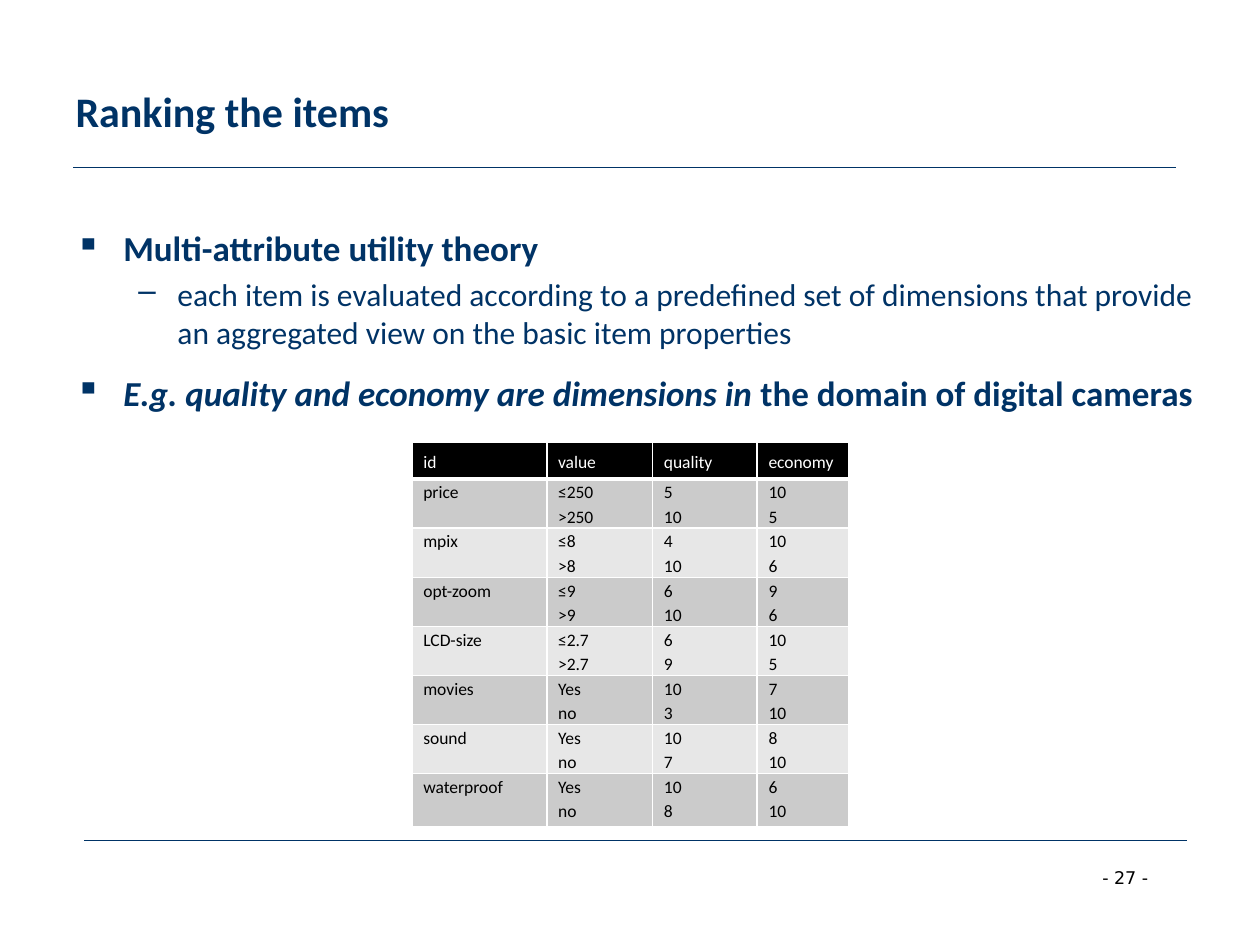
import lxml.etree
import pptx
import pptx.dml.color
import pptx.enum.shapes
import pptx.enum.text
import pptx.oxml.ns
import pptx.util

Inches, Pt, qn = pptx.util.Inches, pptx.util.Pt, pptx.oxml.ns.qn

COLORS = {"navy": "003366", "black": "000000", "white": "FFFFFF",
          "dark_band": "CBCBCB", "light_band": "E7E7E7"}
TITLE = "Ranking the items"
PAGE_NUMBER = "- 27 -"
# Bullet level, then (text, italic) runs
BODY = [
    (0, [("Multi-attribute utility theory", False)]),
    (1, [("each item is evaluated according to a predefined set of dimensions "
          "that provide an aggregated view on the basic item properties", False)]),
    (0, [("E.g. quality and economy are dimensions in ", True),
         ("the domain of digital cameras", False)]),
]
LEVELS = [
    {"char": "▪", "margin": 0.38, "hang": 0.38, "before": 12, "size": 20, "bold": True},
    {"char": "–", "margin": 0.81, "hang": 0.31, "before": 3.6, "size": 18, "bold": False},
]
HEADER = ["id", "value", "quality", "economy"]
RATINGS = [
    ("price", "≤250\n>250", "5\n10", "10\n5"),
    ("mpix", "≤8\n>8", "4\n10", "10\n6"),
    ("opt-zoom", "≤9\n>9", "6\n10", "9\n6"),
    ("LCD-size", "≤2.7\n>2.7", "6\n9", "10\n5"),
    ("movies", "Yes\nno", "10\n3", "7\n10"),
    ("sound", "Yes\nno", "10\n7", "8\n10"),
    ("waterproof", "Yes\nno", "10\n8", "6\n10"),
]
COL_WIDTHS = [1.07, 0.84, 0.83, 0.73]
ROW_HEIGHTS = [0.28] + [0.39] * 6 + [0.42]
RULES = [(0.58, 1.33), (0.67, 6.67)]
RULE_LENGTH = 8.75


def rgb(name):
    return pptx.dml.color.RGBColor.from_string(COLORS[name])


def apply(obj, values):
    for name, value in values.items():
        setattr(obj, name, value)


def add_run(p, text, color, **font):
    r = p.add_run()
    r.text = text
    apply(r.font, {"name": "Calibri", **font})
    r.font.color.rgb = rgb(color)


def add_bullet(p, level):
    pPr = p._p.get_or_add_pPr()
    pPr.set("marL", str(Inches(level["margin"])))
    pPr.set("indent", str(-Inches(level["hang"])))
    lxml.etree.SubElement(pPr, qn("a:buChar")).set("char", level["char"])


def add_border(cell, side, width):
    ln = lxml.etree.SubElement(cell._tc.get_or_add_tcPr(), qn("a:ln" + side))
    ln.set("w", str(Pt(width)))
    fill = lxml.etree.SubElement(ln, qn("a:solidFill"))
    lxml.etree.SubElement(fill, qn("a:srgbClr")).set("val", COLORS["white"])


def add_rule(s, x, y):
    line = s.shapes.add_connector(
        pptx.enum.shapes.MSO_CONNECTOR.STRAIGHT,
        Inches(x), Inches(y), Inches(x + RULE_LENGTH), Inches(y))
    line.line.color.rgb = rgb("navy")
    line.line.width = Pt(0.75)
    lxml.etree.SubElement(line._element.spPr, qn("a:effectLst"))


def add_title(s):
    sp = s.shapes.title
    apply(sp, {"left": Inches(0.5), "top": Inches(0.25),
               "width": Inches(9), "height": Inches(1.25)})
    sp.text_frame.vertical_anchor = pptx.enum.text.MSO_ANCHOR.MIDDLE
    p = sp.text_frame.paragraphs[0]
    p.alignment = pptx.enum.text.PP_ALIGN.LEFT
    add_run(p, TITLE, "navy", size=Pt(24), bold=True)


def add_body(s):
    sp = s.shapes.add_textbox(Inches(0.5), Inches(1.75), Inches(9.15), Inches(4.95))
    tf = sp.text_frame
    tf.word_wrap = True
    for i, (depth, runs) in enumerate(BODY):
        level = LEVELS[depth]
        p = tf.add_paragraph() if i else tf.paragraphs[0]
        p.level = depth
        add_bullet(p, level)
        if i:
            p.space_before = Pt(level["before"])
        for text, italic in runs:
            add_run(p, text, "navy", size=Pt(level["size"]),
                    bold=level["bold"], italic=italic)


def fill_cell(cell, text, row):
    is_header = row == 0
    pad = Inches(0.05 if is_header else 0)
    apply(cell, {"margin_left": Inches(0.09), "margin_right": Inches(0.09),
                 "margin_top": pad, "margin_bottom": pad})
    # The line under the header is thicker
    widths = {"L": 1, "R": 1, "T": 3 if row == 1 else 1, "B": 3 if is_header else 1}
    for side, width in widths.items():
        add_border(cell, side, width)
    cell.fill.solid()
    band = "dark_band" if row % 2 else "light_band"
    cell.fill.fore_color.rgb = rgb("black" if is_header else band)
    tf = cell.text_frame
    for i, line in enumerate(text.split("\n")):
        p = tf.add_paragraph() if i else tf.paragraphs[0]
        p.line_spacing = 1.15
        add_run(p, line, "white" if is_header else "black", size=Pt(10), bold=False)
    p.space_after = Pt(10)


def add_ratings(s):
    rows = [HEADER] + RATINGS
    table = s.shapes.add_table(
        len(rows), len(HEADER), Inches(3.27), Inches(3.51),
        Inches(sum(COL_WIDTHS)), Inches(sum(ROW_HEIGHTS))).table
    for col, width in zip(table.columns, COL_WIDTHS):
        col.width = Inches(width)
    for i, (values, height) in enumerate(zip(rows, ROW_HEIGHTS)):
        table.rows[i].height = Inches(height)
        for j, text in enumerate(values):
            fill_cell(table.cell(i, j), text, i)


def add_page_number(s):
    sp = s.shapes.add_textbox(Inches(8.65), Inches(6.83), Inches(0.76), Inches(0.27))
    sp.text_frame.word_wrap = False
    add_run(sp.text_frame.paragraphs[0], PAGE_NUMBER, "black",
            name="DejaVu Sans", size=Pt(10))


def main():
    prs = pptx.Presentation()
    apply(prs, {"slide_width": Inches(10), "slide_height": Inches(7.5)})
    s = prs.slides.add_slide(prs.slide_layouts[5])
    for x, y in RULES:
        add_rule(s, x, y)
    add_page_number(s)
    add_title(s)
    add_body(s)
    add_ratings(s)
    prs.save("out.pptx")


if __name__ == "__main__":
    main()
